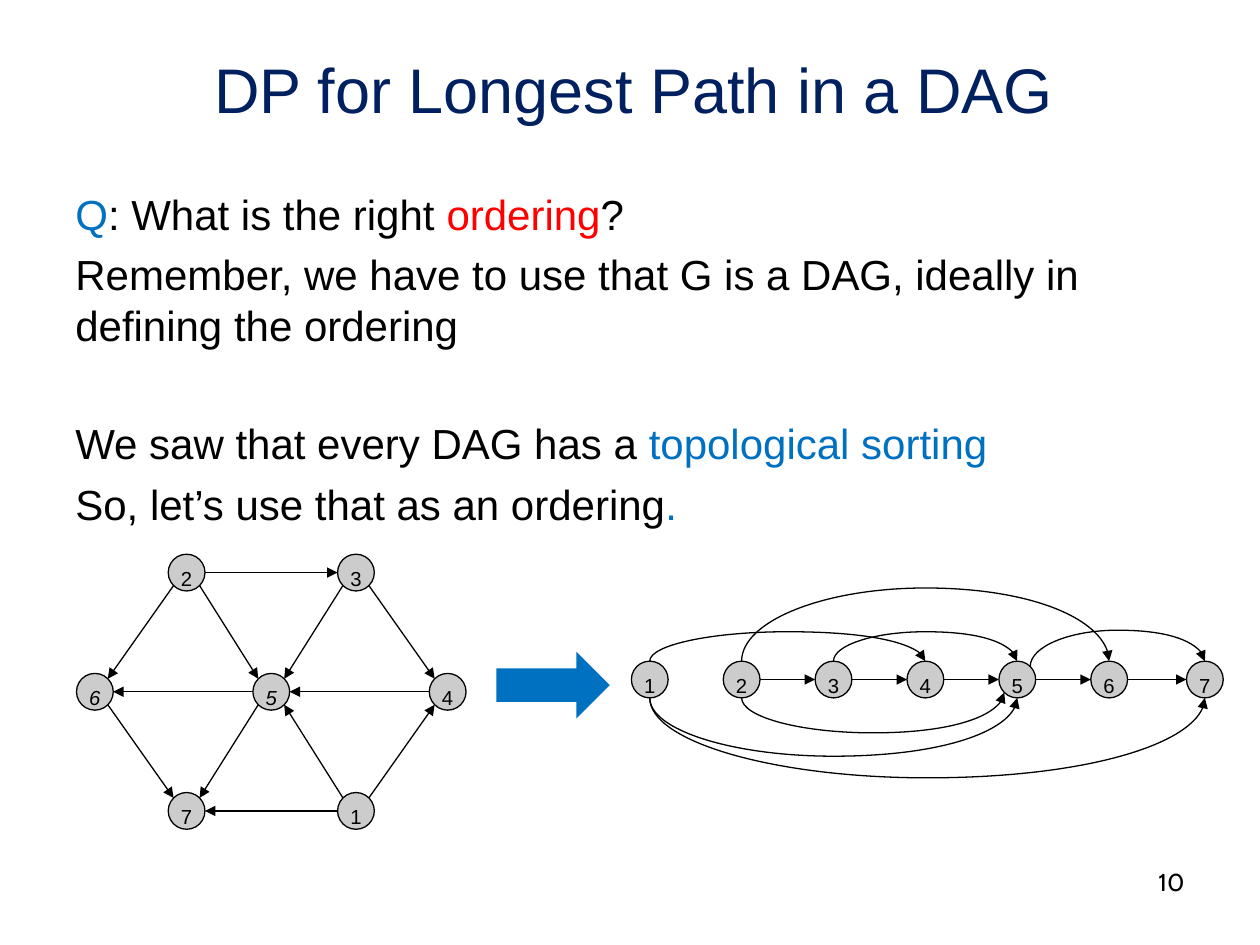
from math import copysign, sqrt

from lxml.etree import SubElement
from pptx import Presentation
from pptx.dml.color import RGBColor
from pptx.enum.shapes import MSO_CONNECTOR as CONNECTOR, MSO_SHAPE as SHAPE
from pptx.enum.text import MSO_ANCHOR as ANCHOR, PP_ALIGN as ALIGN
from pptx.oxml.ns import qn
from pptx.util import Pt

COLORS = {"title": "002060", "accent": "0070C0", "alert": "FF0000",
          "ink": "000000", "node": "CCCCCC"}
RADIUS = 10.5
DIAGONAL = RADIUS / sqrt(2)
ELLIPSE_PULL = 0.55


def color(name):
    """Return the named colour."""
    return RGBColor.from_string(COLORS[name])


def format_run(run, size, color_name="ink", font="Arial"):
    """Set the font, size and colour of a run."""
    run.font.name = font
    run.font.size = Pt(size)
    run.font.color.rgb = color(color_name)


def add_title(slide, left, top, width, height):
    """Place the slide title."""
    title = slide.shapes.title
    title.left, title.top, title.width, title.height = map(Pt, (left, top, width, height))
    frame = title.text_frame
    frame.text = "DP for Longest Path in a DAG"
    frame.vertical_anchor = ANCHOR.TOP
    frame.margin_top = Pt(7)
    paragraph = frame.paragraphs[0]
    paragraph.alignment = ALIGN.CENTER
    format_run(paragraph.runs[0], 36, "title")


def add_body(slide, left, top, width, height):
    """Place the question and its answer."""
    lines = [
        (5.5, [("Q", "accent"), (": What is the right ", "ink"), ("ordering", "alert"), ("?", "ink")]),
        (5.5, [("Remember, we have to use that G is a DAG, ideally in defining the ordering", "ink")]),
        (39, [("We saw that every DAG has a ", "ink"), ("topological sorting", "accent")]),
        (5.5, [("So, let’s use that as an ordering", "ink"), (".", "accent")]),
    ]
    frame = slide.shapes.add_textbox(Pt(left), Pt(top), Pt(width), Pt(height)).text_frame
    frame.word_wrap = True
    for index, (space, parts) in enumerate(lines):
        paragraph = frame.add_paragraph() if index else frame.paragraphs[0]
        paragraph.space_before = Pt(space)
        for text, color_name in parts:
            run = paragraph.add_run()
            run.text = text
            format_run(run, 24, color_name)


def add_page_number(slide, left, top, width, height):
    """Place the page number at the lower right."""
    frame = slide.shapes.add_textbox(Pt(left), Pt(top), Pt(width), Pt(height)).text_frame
    frame.word_wrap = True
    frame.text = "10"
    paragraph = frame.paragraphs[0]
    paragraph.alignment = ALIGN.RIGHT
    format_run(paragraph.runs[0], 14, font="Cabin")


def add_node(slide, label, center, italic=False):
    """Draw a numbered graph node around its centre."""
    x, y = center
    node = slide.shapes.add_shape(SHAPE.OVAL, Pt(x - RADIUS), Pt(y - RADIUS),
                                  Pt(2 * RADIUS), Pt(2 * RADIUS))
    node.shadow.inherit = False
    node.fill.solid()
    node.fill.fore_color.rgb = color("node")
    node.line.color.rgb = color("ink")
    node.line.width = Pt(0.75)
    frame = node.text_frame
    frame.word_wrap = False
    frame.vertical_anchor = ANCHOR.MIDDLE
    frame.margin_left = frame.margin_top = frame.margin_right = 0
    frame.margin_bottom = Pt(7.2)
    frame.text = str(label)
    paragraph = frame.paragraphs[0]
    paragraph.alignment = ALIGN.CENTER
    run = paragraph.runs[0]
    format_run(run, 20)
    run.font.italic = italic
    run.font._element.set("baseline", "-25000")


def style_edge(edge):
    """Give an edge a thin black line with a triangle at its end."""
    edge.line.color.rgb = color("ink")
    edge.line.width = Pt(0.75)
    SubElement(edge.line._get_or_add_ln(), qn("a:tailEnd"), type="triangle")


def add_straight_edge(slide, start, end):
    """Join two node centres with an arrow from rim to rim."""
    dx, dy = end[0] - start[0], end[1] - start[1]
    offset_x = copysign(DIAGONAL if dy else RADIUS, dx)
    offset_y = copysign(DIAGONAL, dy) if dy else 0
    points = (start[0] + offset_x, start[1] + offset_y, end[0] - offset_x, end[1] - offset_y)
    edge = slide.shapes.add_connector(CONNECTOR.STRAIGHT, *map(Pt, points))
    style_edge(edge)
    SubElement(edge._element.spPr, qn("a:effectLst"))


def add_curved_edge(slide, start, end, apex):
    """Draw a half-ellipse arrow between two points, reaching the height apex."""
    (x1, y1), (x2, y2) = start, end
    middle = (x1 + x2) / 2
    pull = (middle - x1) * ELLIPSE_PULL
    points = [
        (x1, y1 + (apex - y1) * ELLIPSE_PULL), (middle - pull, apex), (middle, apex),
        (middle + pull, apex), (x2, y2 + (apex - y2) * ELLIPSE_PULL), (x2, y2),
    ]
    builder = slide.shapes.build_freeform(Pt(x1), Pt(y1))
    builder.add_line_segments([(Pt(x), Pt(y)) for x, y in points], close=False)
    edge = builder.convert_to_shape()
    segments = list(edge._element.iter(qn("a:lnTo")))
    outline = segments[0].getparent()
    for index, segment in enumerate(segments):
        if index % 3 == 0:
            curve = SubElement(outline, qn("a:cubicBezTo"))
        curve.append(segment[0])
        outline.remove(segment)
    edge.shadow.inherit = False
    edge.fill.background()
    style_edge(edge)


def add_graph(slide, left, top, width, height):
    """Draw the DAG as a hexagon with a node in its middle."""
    right, bottom = left + width, top + height
    center_x, center_y = left + width / 2, top + height / 2
    half_side = width * 0.24
    nodes = {
        2: (center_x - half_side, top), 3: (center_x + half_side, top),
        6: (left, center_y), 5: (center_x, center_y), 4: (right, center_y),
        7: (center_x - half_side, bottom), 1: (center_x + half_side, bottom),
    }
    edges = [(2, 6), (2, 5), (2, 3), (3, 4), (4, 5), (1, 4),
             (5, 7), (1, 5), (1, 7), (6, 7), (5, 6), (3, 5)]
    for label, center in nodes.items():
        add_node(slide, label, center, italic=label in (5, 6))
    for start, end in edges:
        add_straight_edge(slide, nodes[start], nodes[end])


def add_sorted_graph(slide, left, center_y, step):
    """Draw the DAG in topological order along a line."""
    nodes = {label: (left + step * (label - 1), center_y) for label in range(1, 7)}
    nodes[7] = (nodes[6][0] + step + 2.2, center_y)
    for label, center in nodes.items():
        add_node(slide, label, center)
    for label in range(2, 7):
        add_straight_edge(slide, nodes[label], nodes[label + 1])
    top, bottom = (0, -RADIUS), (0, RADIUS)
    arcs = [
        (3, top, 5, top, -27.3), (2, bottom, 5, (-DIAGONAL, DIAGONAL), 30.5),
        (1, bottom, 5, bottom, 43.8), (1, top, 4, top, -27.3),
        (5, (DIAGONAL, -DIAGONAL), 7, top, -28.2), (2, top, 6, top, -52.3),
        (1, bottom, 7, bottom, 56.2),
    ]
    for start, start_offset, end, end_offset, rise in arcs:
        start_point = [a + b for a, b in zip(nodes[start], start_offset)]
        end_point = [a + b for a, b in zip(nodes[end], end_offset)]
        add_curved_edge(slide, start_point, end_point, center_y + rise)


def add_block_arrow(slide, left, top, width, height):
    """Place the block arrow between the two graphs."""
    arrow = slide.shapes.add_shape(SHAPE.RIGHT_ARROW, Pt(left), Pt(top), Pt(width), Pt(height))
    arrow.shadow.inherit = False
    arrow.fill.solid()
    arrow.fill.fore_color.rgb = color("accent")
    arrow.line.fill.background()


def main():
    """Build the slide and save it."""
    presentation = Presentation()
    presentation.slide_width, presentation.slide_height = Pt(720), Pt(540)
    slide = presentation.slides.add_slide(presentation.slide_layouts[5])
    add_title(slide, 20.16, 21.6, 684, 90)
    add_body(slide, 36, 104.4, 648, 378)
    add_page_number(slide, 516.24, 491.76, 167.76, 37.44)
    add_graph(slide, 54.2, 327.2, 201.6, 136.2)
    add_sorted_graph(slide, 371.3, 388.3, 52.5)
    add_block_arrow(slide, 283.7, 372.4, 64.8, 38.2)
    presentation.save("out.pptx")


if __name__ == "__main__":
    main()
